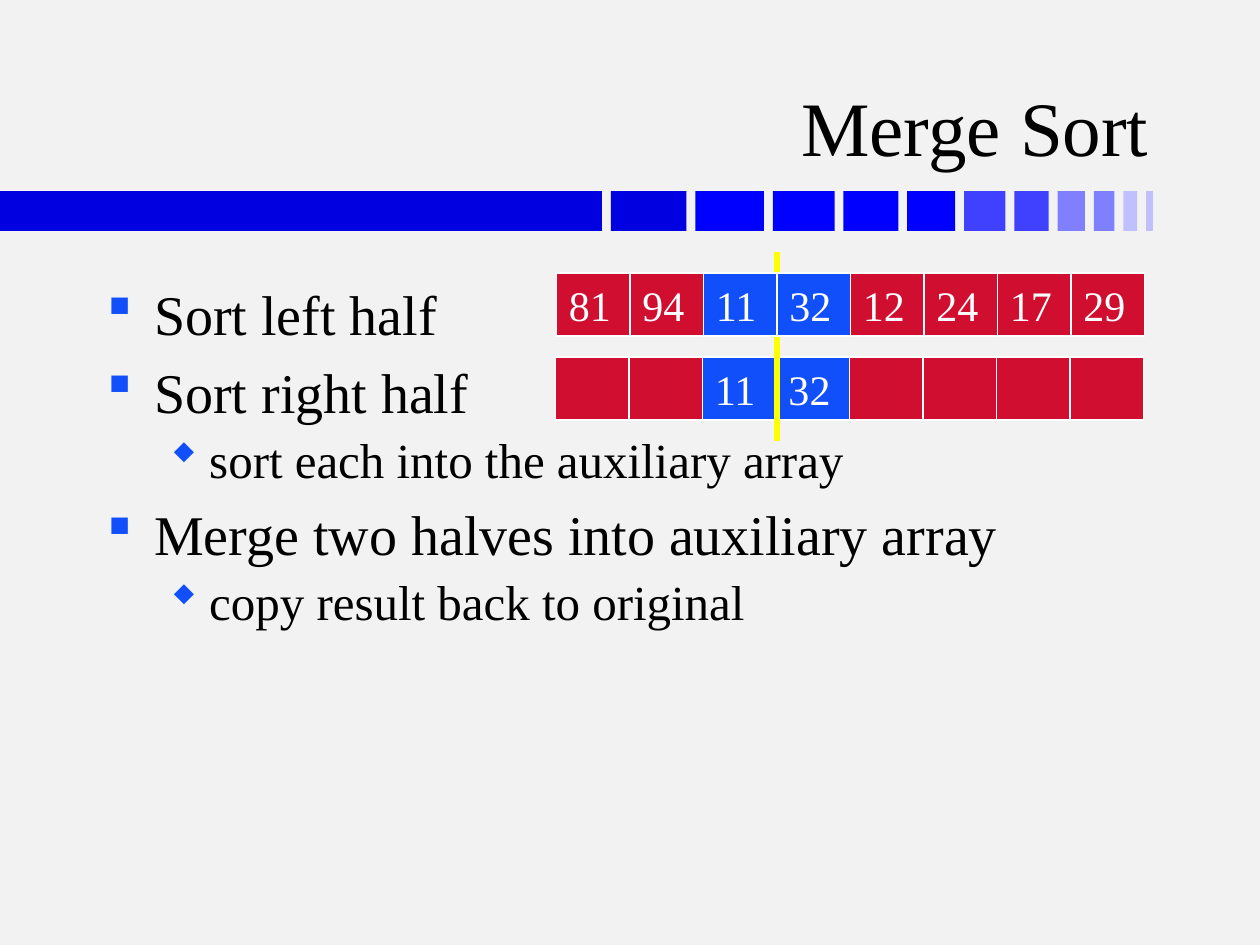
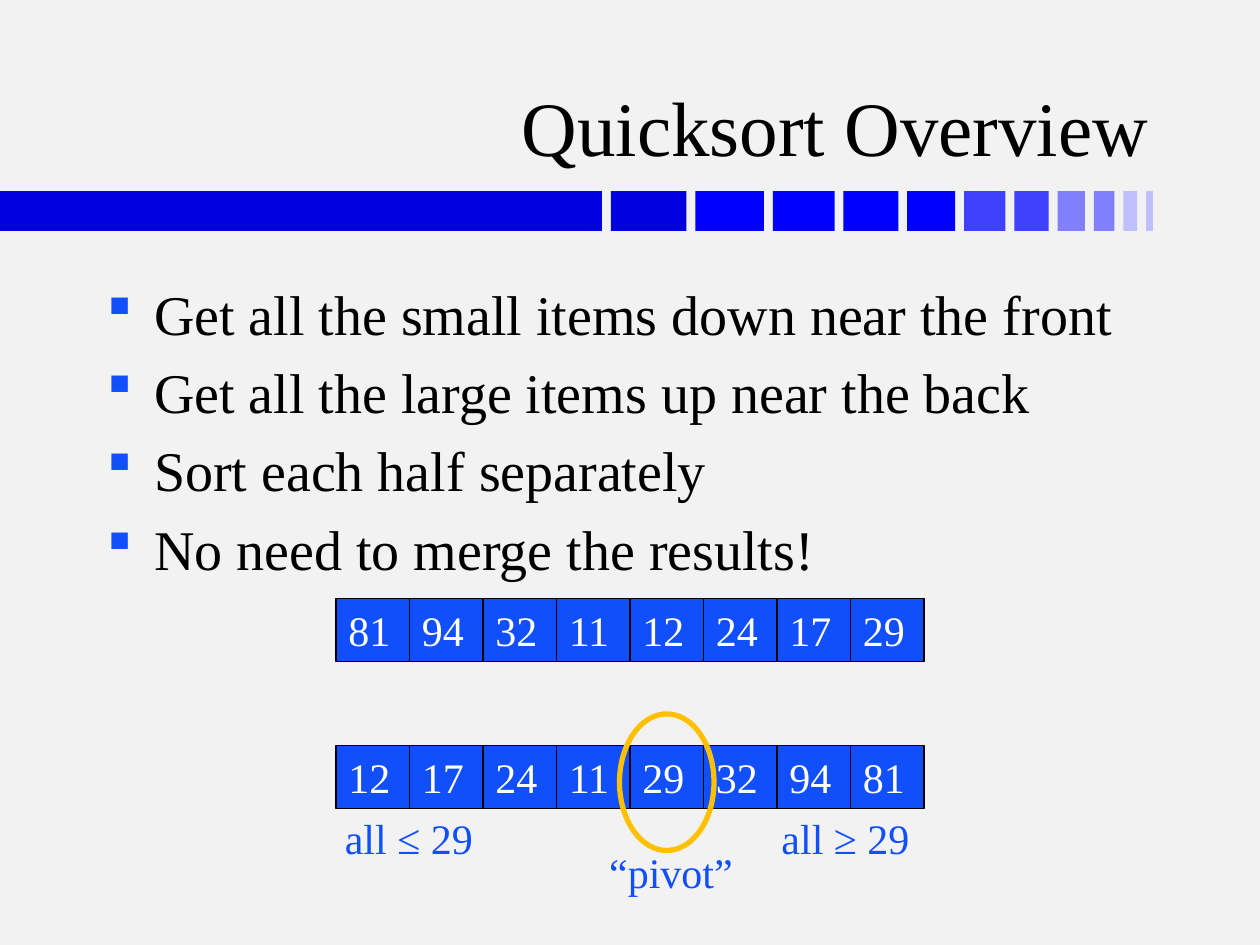
from lxml import etree
from pptx import Presentation
from pptx.dml.color import RGBColor
from pptx.enum import shapes, text
from pptx.oxml import ns
from pptx.util import Pt

MERGE_SORT = {
    "title": "Merge Sort",
    "bullets": [
        (0, "Sort left half"),
        (0, "Sort right half"),
        (1, "sort each into the auxiliary array"),
        (0, "Merge two halves into auxiliary array"),
        (1, "copy result back to original"),
    ],
}
QUICKSORT = {
    "title": "Quicksort Overview",
    "bullets": [
        (0, "Get all the small items down near the front"),
        (0, "Get all the large items up near the back"),
        (0, "Sort each half separately"),
        (0, "No need to merge the results!"),
    ],
}
INPUT_ARRAY = ["81", "94", "11", "32", "12", "24", "17", "29"]
AUXILIARY_ARRAY = ["", "", "11", "32", "", "", "", ""]
SORTED_CELLS = (2, 3)
UNPARTITIONED = ["81", "94", "32", "11", "12", "24", "17", "29"]
PARTITIONED = ["12", "17", "24", "11", "29", "32", "94", "81"]
PARTITION_LABELS = [
    ("all ≤ 29", 190, 461, 88),
    ("all ≥ 29", 439.5, 461, 88),
    ("“pivot”", 341, 480, 85),
]

BACKGROUND = RGBColor(0xF2, 0xF2, 0xF2)
BLACK = RGBColor(0, 0, 0)
WHITE = RGBColor(0xFF, 0xFF, 0xFF)
BLUE = RGBColor(0x11, 0x4F, 0xFB)
RED = RGBColor(0xCF, 0x0E, 0x30)
YELLOW = RGBColor(0xFF, 0xFF, 0)
GOLD = RGBColor(0xFF, 0xC0, 0)
BAND_DARK = RGBColor(0, 0, 0xE0)
BAND_BLUES = [BAND_DARK] + [
    RGBColor(tint, tint, 0xFF)
    for tint in (0, 0, 0, 0, 0x40, 0x40, 0x80, 0x80, 0xC0, 0xC0)
]

FONT = "Times New Roman"
BULLET_FONT = "Wingdings"
BAND_TOP, BAND_HEIGHT, BAND_GAP = 109.2, 22.8, 5.1
BAND_START, BAND_STEP = 344, 3.92
CELL_WIDTH, CELL_HEIGHT = 42, 36
LEVELS = [
    {"size": 32, "margin": 27, "indent": -27, "before": 20000, "bullet": "§"},
    {"size": 28, "margin": 58.5, "indent": -22.5, "before": 10000, "bullet": "w"},
]


def set_attributes(target, values):
    for name, value in values.items():
        setattr(target, name, value)


def write(paragraph, words, size, colour):
    run = paragraph.add_run()
    run.text = words
    set_attributes(run.font, {"name": FONT, "size": Pt(size)})
    run.font.color.rgb = colour


def add_block(slide, kind, box, fill=None, line=None, weight=1):
    shape = slide.shapes.add_shape(kind, *map(Pt, box))
    shape.shadow.inherit = False
    if fill is None:
        shape.fill.background()
    else:
        shape.fill.solid()
        shape.fill.fore_color.rgb = fill
    if line is None:
        shape.line.fill.background()
    else:
        shape.line.color.rgb = line
        shape.line.width = Pt(weight)
    return shape


def add_text_frame(slide, box, **format_values):
    frame = slide.shapes.add_textbox(*map(Pt, box)).text_frame
    set_attributes(frame, format_values)
    return frame


def add_band(slide):
    rectangle = shapes.MSO_SHAPE.RECTANGLE
    add_block(slide, rectangle, (0, BAND_TOP, BAND_START, BAND_HEIGHT), BAND_DARK)
    left = BAND_START + BAND_GAP
    for index, colour in enumerate(BAND_BLUES):
        width = BAND_STEP * (len(BAND_BLUES) - index)
        add_block(slide, rectangle, (left, BAND_TOP, width, BAND_HEIGHT), colour)
        left += width + BAND_GAP


def format_bullet(paragraph, level):
    properties = paragraph._p.get_or_add_pPr()
    properties.set("marL", str(Pt(level["margin"])))
    properties.set("indent", str(Pt(level["indent"])))
    spacing = etree.SubElement(properties, ns.qn("a:spcBef"))
    etree.SubElement(spacing, ns.qn("a:spcPct"), val=str(level["before"]))
    colour = etree.SubElement(properties, ns.qn("a:buClr"))
    etree.SubElement(colour, ns.qn("a:srgbClr"), val=str(BLUE))
    etree.SubElement(properties, ns.qn("a:buFont"), typeface=BULLET_FONT,
                     pitchFamily="2", charset="2")
    etree.SubElement(properties, ns.qn("a:buChar"), char=level["bullet"])


def add_content_slide(presentation, content):
    slide = presentation.slides.add_slide(presentation.slide_layouts[6])
    slide.background.fill.solid()
    slide.background.fill.fore_color.rgb = BACKGROUND
    add_band(slide)
    title = add_text_frame(slide, (53, 13.5, 610.5, 88.5), word_wrap=True,
                           vertical_anchor=text.MSO_ANCHOR.BOTTOM)
    title.paragraphs[0].alignment = text.PP_ALIGN.RIGHT
    write(title.paragraphs[0], content["title"], 44, BLACK)
    body = add_text_frame(slide, (54, 156, 612, 324), word_wrap=True)
    for index, (depth, words) in enumerate(content["bullets"]):
        paragraph = body.add_paragraph() if index else body.paragraphs[0]
        paragraph.level = depth
        format_bullet(paragraph, LEVELS[depth])
        write(paragraph, words, LEVELS[depth]["size"], BLACK)
    return slide


def add_array(slide, values, left, top, line, fills):
    for index, (value, fill) in enumerate(zip(values, fills)):
        box = (left + index * CELL_WIDTH, top, CELL_WIDTH, CELL_HEIGHT)
        cell = add_block(slide, shapes.MSO_SHAPE.RECTANGLE, box, fill, line)
        if value:
            set_attributes(cell.text_frame, {
                "word_wrap": False, "vertical_anchor": text.MSO_ANCHOR.MIDDLE})
            paragraph = cell.text_frame.paragraphs[0]
            paragraph.alignment = text.PP_ALIGN.LEFT
            write(paragraph, value, 24, WHITE)


def add_divider(slide, x, top, bottom):
    divider = slide.shapes.add_connector(
        shapes.MSO_CONNECTOR.STRAIGHT, Pt(x), Pt(top), Pt(x), Pt(bottom))
    divider.line.color.rgb = YELLOW
    divider.line.width = Pt(3)
    etree.SubElement(divider._element.spPr, ns.qn("a:effectLst"))


def build_merge_sort(presentation):
    slide = add_content_slide(presentation, MERGE_SORT)
    fills = [BLUE if index in SORTED_CELLS else RED
             for index in range(len(INPUT_ARRAY))]
    add_array(slide, AUXILIARY_ARRAY, 317.5, 204, WHITE, fills)
    add_divider(slide, 318 + 3 * CELL_WIDTH, 144, 252)
    add_array(slide, INPUT_ARRAY, 318, 156, WHITE, fills)


def build_quicksort(presentation):
    slide = add_content_slide(presentation, QUICKSORT)
    fills = [BLUE] * len(PARTITIONED)
    for values, top in ((UNPARTITIONED, 342), (PARTITIONED, 426)):
        add_array(slide, values, 192, top, BLACK, fills)
    for words, left, top, width in PARTITION_LABELS:
        label = add_text_frame(slide, (left, top, width, CELL_HEIGHT), word_wrap=False,
                               auto_size=text.MSO_AUTO_SIZE.SHAPE_TO_FIT_TEXT)
        write(label.paragraphs[0], words, 24, BLUE)
    add_block(slide, shapes.MSO_SHAPE.OVAL, (354, 408, 54, 78), line=GOLD, weight=3)


def main():
    presentation = Presentation()
    set_attributes(presentation, {"slide_width": Pt(720), "slide_height": Pt(540)})
    build_merge_sort(presentation)
    build_quicksort(presentation)
    presentation.save("out.pptx")


if __name__ == "__main__":
    main()
